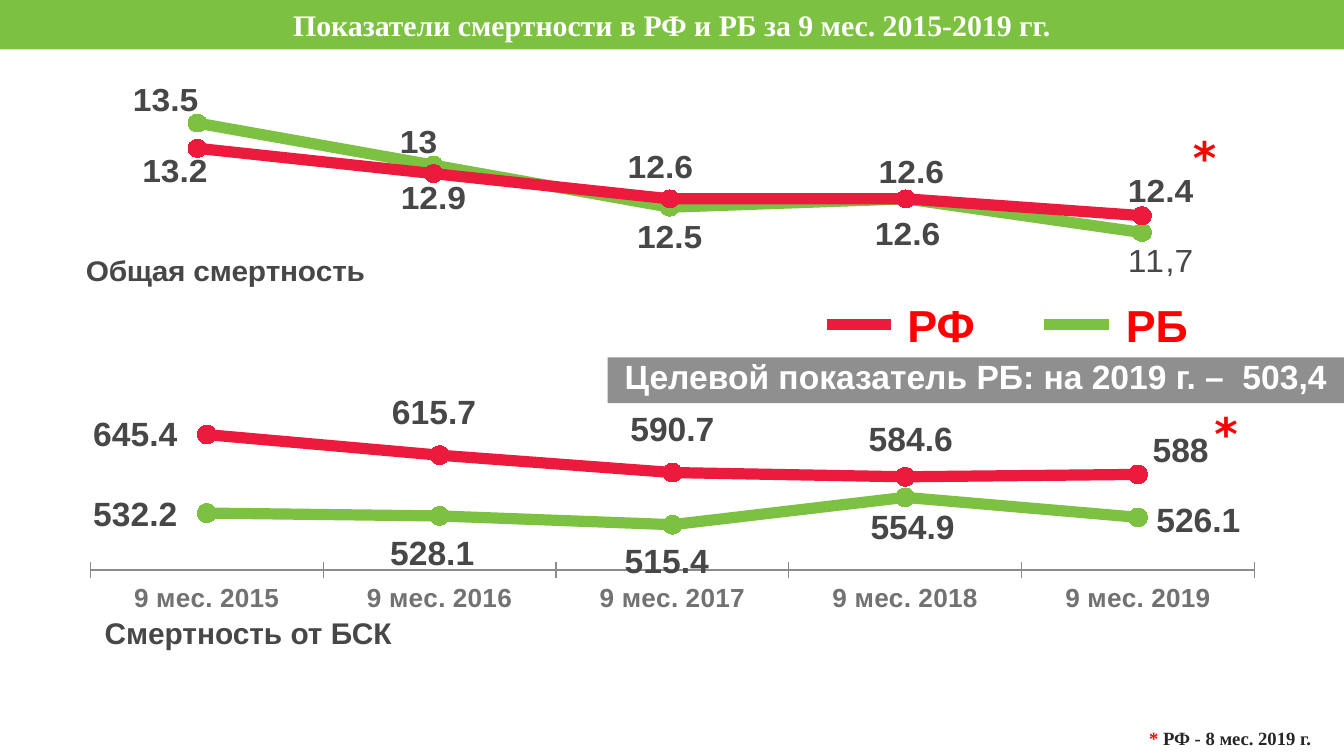
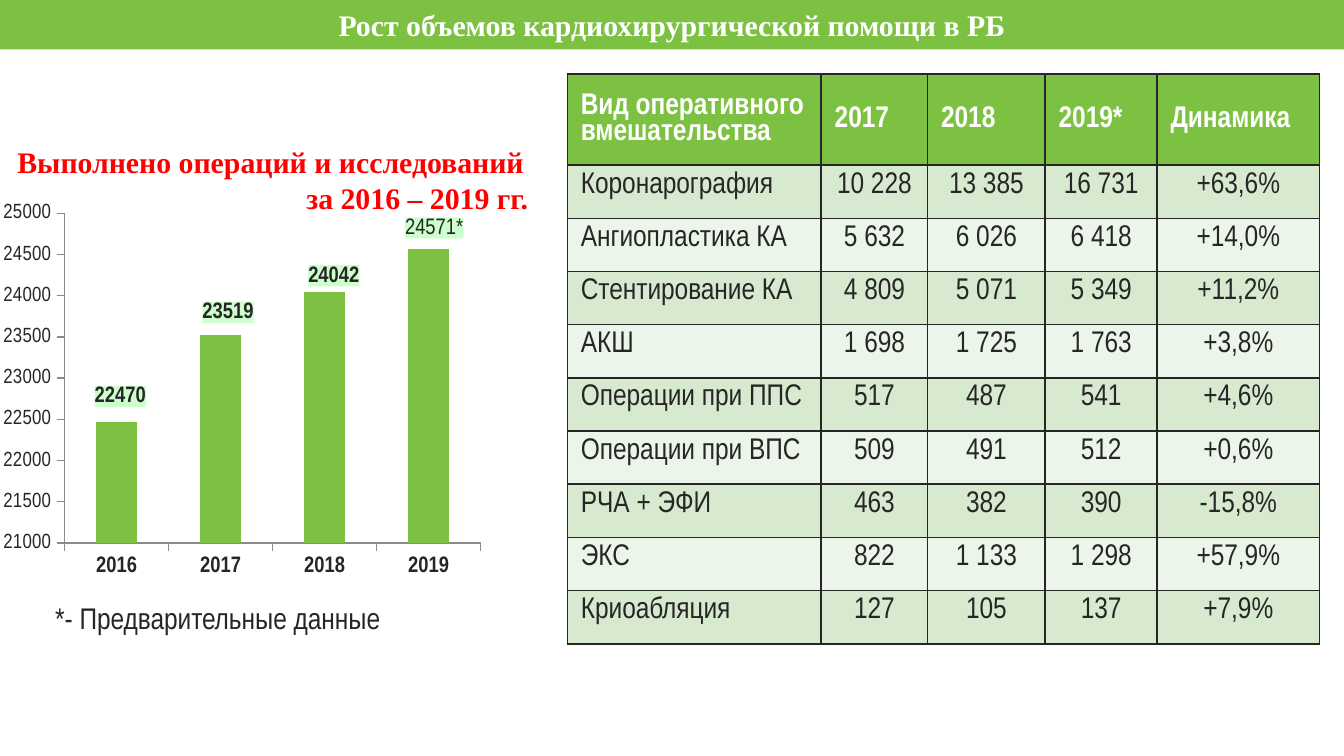
from copy import deepcopy

from lxml import etree
from pptx import Presentation
from pptx.chart.data import CategoryChartData
from pptx.dml.color import RGBColor
from pptx.enum.chart import (XL_CHART_TYPE, XL_LABEL_POSITION, XL_MARKER_STYLE,
                             XL_TICK_LABEL_POSITION, XL_TICK_MARK)
from pptx.enum.shapes import MSO_CONNECTOR, MSO_SHAPE
from pptx.enum.text import MSO_ANCHOR, MSO_AUTO_SIZE, PP_ALIGN
from pptx.oxml import parse_xml
from pptx.oxml.ns import qn
from pptx.util import Pt

LEFT, CENTER, RIGHT = PP_ALIGN.LEFT, PP_ALIGN.CENTER, PP_ALIGN.RIGHT
MIDDLE = MSO_ANCHOR.MIDDLE
LINE, COLUMN = XL_CHART_TYPE.LINE_MARKERS, XL_CHART_TYPE.COLUMN_STACKED
ABOVE, BELOW = XL_LABEL_POSITION.ABOVE, XL_LABEL_POSITION.BELOW
BEFORE, AFTER = XL_LABEL_POSITION.LEFT, XL_LABEL_POSITION.RIGHT
INSIDE = XL_LABEL_POSITION.CENTER
CROSS, OUTSIDE = XL_TICK_MARK.CROSS, XL_TICK_MARK.OUTSIDE

GREEN, CRIMSON, RED, WHITE = "7DC142", "EC1A3C", "FF0000", "FFFFFF"
INK, DARK, GRAY, AXIS, BANNER = "262626", "474747", "727272", "8B8B8B", "8F8F8F"
LABEL_FILL, ROW_TINTS = "CCFFCC", ("D7E9CF", "ECF5E9")
SANS, NARROW, SERIF, STAR = "Arial", "Arial Narrow", "Times New Roman", "DejaVu Sans"
A = 'xmlns:a="http://schemas.openxmlformats.org/drawingml/2006/main"'
C = 'xmlns:c="http://schemas.openxmlformats.org/drawingml/2006/chart"'
C15 = 'xmlns:c15="http://schemas.microsoft.com/office/drawing/2012/chart"'

rgb = RGBColor.from_string


def write(holder, text, size, font, color, align=LEFT, bold=True):
    """Fill a shape or cell with text in one format."""
    frame = holder.text_frame
    frame.text = text
    frame.word_wrap = True
    for paragraph in frame.paragraphs:
        paragraph.alignment = align
        for run in paragraph.runs:
            run.font.size, run.font.name, run.font.bold = Pt(size), font, bold
            run.font.color.rgb = rgb(color)
    return frame


def set_layout(parent, index, **values):
    """Give a chart part a manual layout."""
    for old in parent.findall(qn("c:layout")):
        parent.remove(old)
    layout = parse_xml(f"<c:layout {C}><c:manualLayout/></c:layout>")
    for key, value in values.items():
        etree.SubElement(layout[0], qn(f"c:{key}")).set("val", str(value))
    parent.insert(index, layout)


prs = Presentation()
prs.slide_width, prs.slide_height = Pt(720), Pt(405)

# Slides with their title bands
slides = []
for heading in ("Показатели смертности в РФ и РБ за 9 мес. 2015-2019 гг.",
                "Рост объемов кардиохирургической помощи в РБ"):
    slide = prs.slides.add_slide(prs.slide_layouts[5])
    band = slide.shapes.title
    band.left, band.top, band.width, band.height = Pt(0), Pt(0), Pt(720), Pt(26.5)
    band.fill.solid()
    band.fill.fore_color.rgb = rgb(GREEN)
    frame = write(band, heading, 16, SERIF, WHITE, CENTER)
    frame.vertical_anchor = MIDDLE
    frame.auto_size = MSO_AUTO_SIZE.NONE
    slides.append(slide)
mortality, surgery = slides

# Charts: each label is (position, shift right, shift down[, own text])
charts = [
    dict(slide=mortality, kind=LINE, box=(42.5, 44, 649.5, 115),
         plot=(0, 0.065, 0.974, 0.62), scale=(12.2, 13.7),
         categories=["1", "2", "3", "4", "5"], label=(18, SANS, DARK),
         series=[
             ("РБ", GREEN, (13.5, 13, 12.5, 12.6, 12.2),
              [(ABOVE, -17, 5), (ABOVE, -8, 5), (BELOW, 0, -1), (BELOW, 1, 2),
               (BELOW, 10, -2, "11,7")]),
             ("РФ", CRIMSON, (13.2, 12.9, 12.6, 12.6, 12.4),
              [(BELOW, -12, -5), (BELOW, 0, -4), (ABOVE, -5, 0), (ABOVE, 3, 3),
               (ABOVE, 10, 4)])]),
    dict(slide=mortality, kind=LINE, box=(8.5, 209, 754, 144),
         plot=(0.053, 0.025, 0.827, 0.645), scale=(450, 700),
         categories=[f"9 мес. {year}" for year in range(2015, 2020)],
         label=(18, SANS, DARK), tick=(CROSS, 14, SANS, GRAY),
         series=[
             ("РФ", CRIMSON, (645.4, 615.7, 590.7, 584.6, 588),
              [(BEFORE, -8, 0), (ABOVE, -3, -5), (ABOVE, 0, -5), (ABOVE, 3, -2),
               (AFTER, 0, -13)]),
             ("РБ", GREEN, (532.2, 528.1, 515.4, 554.9, 526.1),
              [(BEFORE, -8, 1), (BELOW, -4, 2), (BELOW, -3, 2), (BELOW, 4, -2),
               (AFTER, 2, 2)])]),
    dict(slide=surgery, kind=COLUMN, box=(0, 101.5, 317.5, 221),
         plot=(0.109, 0.058, 0.702, 0.799), scale=(21000, 25000),
         categories=["2016", "2017", "2018", "2019"],
         label=(12, NARROW, INK), tick=(OUTSIDE, 12, NARROW, INK),
         series=[
             ("Операции", GREEN, (22470, 23519, 24042, 24571),
              [(INSIDE, 2, -46), (INSIDE, 4, -68), (INSIDE, 5, -76),
               (INSIDE, 3, -90, "24571*")])]),
]
drawn = []
for spec in charts:
    data = CategoryChartData()
    data.categories = spec["categories"]
    for name, _, values, _ in spec["series"]:
        data.add_series(name, values)
    box = spec["box"]
    chart = spec["slide"].shapes.add_chart(
        spec["kind"], *[Pt(v) for v in box], data).chart
    drawn.append(chart)
    chart.has_legend = chart.has_title = False
    size, font, color = spec["label"]
    chart.font.size, chart.font.name = Pt(size), font
    chart.font.color.rgb = rgb(INK)
    plot = chart.plots[0]
    plot.vary_by_categories = False
    x, y, w, h = spec["plot"]
    set_layout(chart.element.xpath(".//c:plotArea")[0], 0, layoutTarget="inner",
               xMode="edge", yMode="edge", x=x, y=y, w=w, h=h)

    # Axes
    value_axis, category_axis = chart.value_axis, chart.category_axis
    value_axis.has_major_gridlines = False
    value_axis.minimum_scale, value_axis.maximum_scale = spec["scale"]
    value_axis.visible = spec["kind"] == COLUMN
    category_axis.visible = "tick" in spec
    if "tick" in spec:
        mark, tick_size, tick_font, tick_color = spec["tick"]
        category_axis.major_tick_mark = mark
        category_axis.tick_label_position = XL_TICK_LABEL_POSITION.LOW
        tick = category_axis.tick_labels.font
        tick.size, tick.name, tick.bold = Pt(tick_size), tick_font, True
        tick.color.rgb = rgb(tick_color)
        category_axis.format.line.color.rgb = rgb(AXIS)
        category_axis.format.line.width = Pt(0.75)

    # Series and labels
    for series, (_, paint, _, labels) in zip(plot.series, spec["series"]):
        if spec["kind"] == LINE:
            series.smooth = False
            series.format.line.color.rgb = rgb(paint)
            series.format.line.width = Pt(6)
            series.marker.style, series.marker.size = XL_MARKER_STYLE.CIRCLE, 10
            for part in (series.marker.format.fill, series.marker.format.line.fill):
                part.solid()
                part.fore_color.rgb = rgb(paint)
        else:
            series.format.fill.solid()
            series.format.fill.fore_color.rgb = rgb(paint)
        series.data_labels.show_value = True
        for i, (position, _, _, *own) in enumerate(labels):
            label = series.points[i].data_label
            if own:
                label.text_frame.text = own[0]
                text = label.text_frame.paragraphs[0].runs[0].font
            else:
                text = label.font
            text.size, text.name, text.bold = Pt(size), font, not own
            text.color.rgb = rgb(color)
            label.position = position
    shifts = [label[1:3] for entry in spec["series"] for label in entry[3]]
    for label, (right, down) in zip(chart.element.xpath(".//c:dLbl"), shifts):
        set_layout(label, 1, x=round(right / box[2], 4), y=round(down / box[3], 4))

    # No leader lines between points and shifted labels
    for flag in chart.element.xpath(".//c:showLeaderLines"):
        flag.set("val", "0")
    for group in chart.element.xpath(".//c:ser/c:dLbls"):
        group.append(parse_xml(
            f'<c:extLst {C}><c:ext {C15} uri="{{CE6537A1-D6FC-4f65-9D91-7224C49458BB}}">'
            '<c15:showLeaderLines val="0"/></c:ext></c:extLst>'))
general, circulatory, operations = drawn

# Title of the general mortality chart
general.has_title = True
write(general.chart_title, "Общая смертность", 16, SANS, DARK)
set_layout(general.element.xpath(".//c:title")[0], 1,
           xMode="edge", yMode="edge", x=0.001, y=0.757)

# Hidden second axis for the circulatory chart
area = circulatory.element.xpath(".//c:plotArea")[0]
first = area.find(qn("c:lineChart"))
second = deepcopy(first)
first.remove(first.findall(qn("c:ser"))[1])
second.remove(second.findall(qn("c:ser"))[0])
first.addnext(second)
axes = [area.find(qn("c:catAx")), area.find(qn("c:valAx"))]
new_ids = {axis.find(qn("c:axId")).get("val"): str(9001 + i)
           for i, axis in enumerate(axes)}
twins = [deepcopy(axis) for axis in axes]
for twin in reversed(twins):
    axes[1].addnext(twin)
    twin.find(qn("c:delete")).set("val", "1")
for part in (second, *twins):
    for ref in part.xpath("./c:axId | ./c:crossAx"):
        ref.set("val", new_ids[ref.get("val")])
scaling = twins[1].find(qn("c:scaling"))
scaling.find(qn("c:min")).set("val", "500")
scaling.remove(scaling.find(qn("c:max")))
twins[1].find(qn("c:axPos")).set("val", "r")
twins[1].find(qn("c:crosses")).set("val", "max")

# Operations chart: value axis, gap and label backgrounds
operations.plots[0].gap_width, operations.plots[0].overlap = 150, 100
value_axis = operations.value_axis
value_axis.major_unit = 500
value_axis.major_tick_mark = OUTSIDE
value_axis.tick_labels.font.size = Pt(11)
value_axis.tick_labels.font.name = NARROW
value_axis.format.line.color.rgb = rgb(AXIS)
for label in operations.element.xpath(".//c:dLbl"):
    label.xpath("./c:txPr | ./c:dLblPos")[0].addprevious(parse_xml(
        f'<c:spPr {C} {A}><a:solidFill><a:srgbClr val="{LABEL_FILL}"/>'
        '</a:solidFill></c:spPr>'))

# Target banner
target = mortality.shapes.add_shape(
    MSO_SHAPE.RECTANGLE, Pt(325.5), Pt(191.5), Pt(394.5), Pt(24.5))
target.shadow.inherit = False
target.fill.solid()
target.fill.fore_color.rgb = rgb(BANNER)
target.line.fill.background()
frame = write(target, "Целевой показатель РБ: на 2019 г. –  503,4", 18, SANS, WHITE, CENTER)
frame.word_wrap = False
frame.vertical_anchor = MIDDLE
frame.paragraphs[0].line_spacing = Pt(17)

# Legend strokes
for x, color in ((443, CRIMSON), (559.5, GREEN)):
    stroke = mortality.shapes.add_connector(
        MSO_CONNECTOR.STRAIGHT, Pt(x), Pt(174), Pt(x + 34.5), Pt(174))
    stroke.line.color.rgb = rgb(color)
    stroke.line.width = Pt(6)
    stroke.element.spPr.append(parse_xml(f"<a:effectLst {A}/>"))

# Legend names, stars and captions
for slide, box, *content in (
        (mortality, (22.5, 326, 221, 26.5), "Смертность от БСК", 16, SANS, DARK, CENTER),
        (mortality, (479, 156, 68, 36), "РФ", 24, SANS, RED),
        (mortality, (596, 156, 73, 36), "РБ", 24, SANS, RED),
        (mortality, (632, 66, 28, 36), "*", 24, STAR, RED),
        (mortality, (643.5, 214, 22.5, 36), "*", 24, STAR, RED),
        (surgery, (0, 73.5, 290, 46), "Выполнено операций и исследований\nза 2016 – 2019 гг.",
         16, SERIF, RED, CENTER),
        (surgery, (22.5, 317.5, 249, 26.5), "*- Предварительные данные",
         16, NARROW, INK, LEFT, False)):
    caption = slide.shapes.add_textbox(*[Pt(v) for v in box])
    frame = write(caption, *content)
    if len(frame.paragraphs) > 1:
        frame.paragraphs[1].alignment = RIGHT

# Footnote
footnote = mortality.shapes.add_textbox(Pt(608.5), Pt(386), Pt(111.5), Pt(19))
note = write(footnote, "*", 10, SERIF, RED).paragraphs[0].add_run()
note.text = " РФ - 8 мес. 2019 г."
note.font.size, note.font.name, note.font.bold = Pt(10), SERIF, True
note.font.color.rgb = rgb(INK)

# Table of operations
rows = [
    ("Вид оперативного вмешательства", "2017", "2018", "2019*", "Динамика"),
    ("Коронарография", "10 228", "13 385", "16 731", "+63,6%"),
    ("Ангиопластика КА", "5 632", "6 026", "6 418", "+14,0%"),
    ("Стентирование КА", "4 809", "5 071", "5 349", "+11,2%"),
    ("АКШ", "1 698", "1 725", "1 763", "+3,8%"),
    ("Операции при ППС", "517", "487", "541", "+4,6%"),
    ("Операции при ВПС", "509", "491", "512", "+0,6%"),
    ("РЧА + ЭФИ", "463", "382", "390", "-15,8%"),
    ("ЭКС", "822", "1 133", "1 298", "+57,9%"),
    ("Криоабляция", "127", "105", "137", "+7,9%"),
]
table = surgery.shapes.add_table(
    len(rows), 5, Pt(304), Pt(39.5), Pt(403), Pt(306)).table
table.horz_banding = False
for column, width in zip(table.columns, (136, 57, 63, 60, 87)):
    column.width = Pt(width)
for r, row in enumerate(rows):
    table.rows[r].height = Pt(28.5 if r else 49)
    for c, text in enumerate(row):
        cell = table.cell(r, c)
        frame = write(cell, text, 16, NARROW, INK if r else WHITE,
                      CENTER if r and c else LEFT, r == 0)
        frame.paragraphs[0].line_spacing = 0.95
        if r == 0:
            cell.vertical_anchor = MIDDLE
        cell.fill.solid()
        cell.fill.fore_color.rgb = rgb(ROW_TINTS[(r - 1) % 2] if r else GREEN)
        for i, side in enumerate("LRTB"):
            cell._tc.tcPr.insert(i, parse_xml(
                f'<a:ln{side} {A} w="12700"><a:solidFill><a:srgbClr val="{INK}"/>'
                f'</a:solidFill></a:ln{side}>'))

prs.save("out.pptx")
